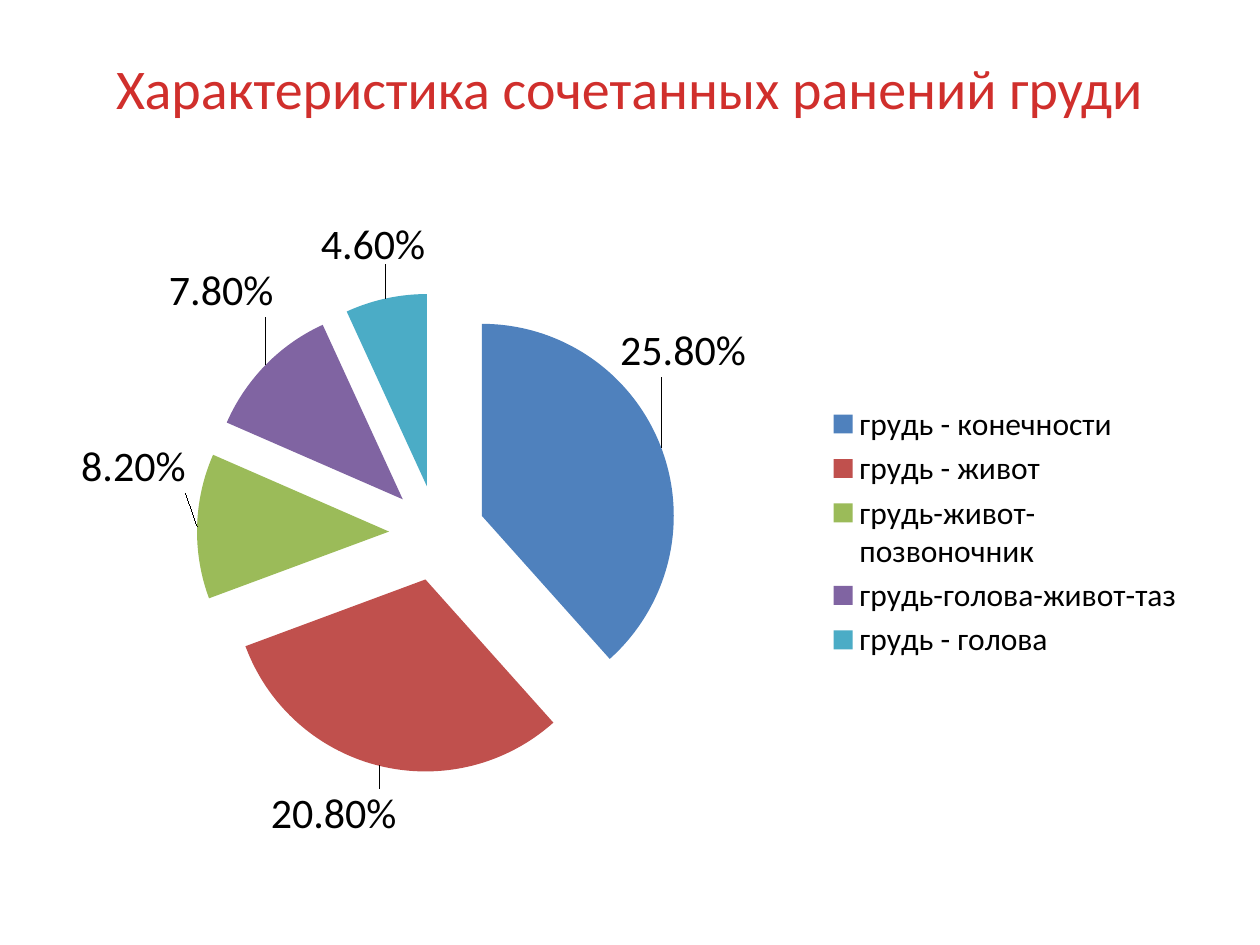
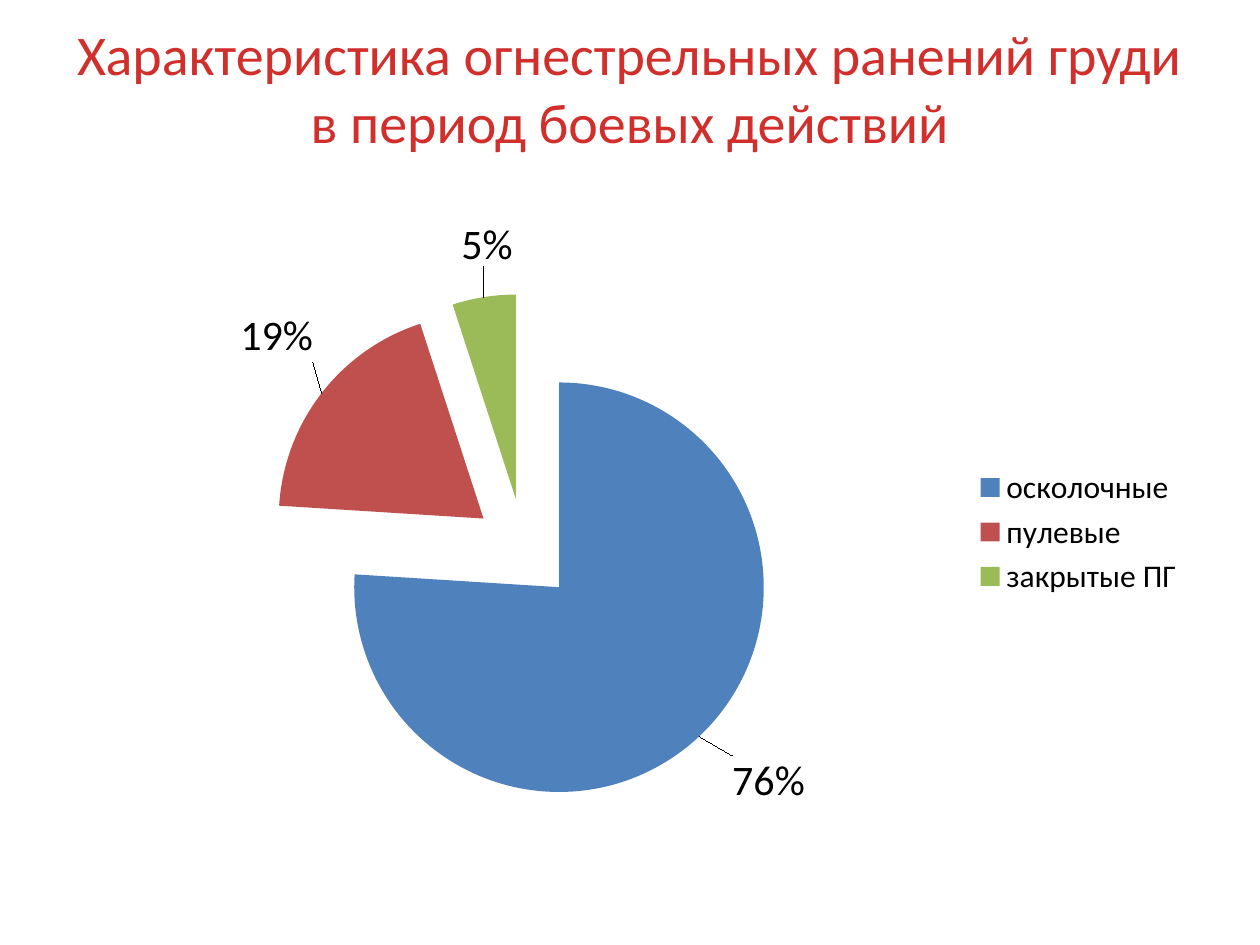
from collections import namedtuple
from dataclasses import dataclass

from lxml.etree import SubElement
from pptx import Presentation
from pptx.chart.data import CategoryChartData
from pptx.dml.color import RGBColor
from pptx.enum.chart import XL_CHART_TYPE, XL_LABEL_POSITION, XL_LEGEND_POSITION
from pptx.enum.text import MSO_ANCHOR, MSO_AUTO_SIZE, PP_ALIGN
from pptx.oxml.ns import qn
from pptx.util import Pt

EMU_PER_PX = 914400 / 126

Box = namedtuple("Box", "left top width height")
# label_shift: px from the label's default place outside the slice
Slice = namedtuple("Slice", "name share label_shift")


@dataclass(frozen=True)
class Theme:
    font: str = "Calibri"
    title_color: str = "D02F2C"
    text_color: str = "000000"
    slice_colors: tuple = ("4F81BD", "C0504D", "9BBB59", "8064A2", "4BACC6")
    title_size: int = 32
    legend_size: int = 18
    label_size: int = 24


THEME = Theme()
PAGE = Box(0, 0, 1260, 945)
TITLE_BOX = Box(63, 38, 1134, 157)
TITLE_BOTTOM_INSET = 65
CHART_BOX = Box(63, 220, 1134, 624)
EXPLOSION_PERCENT = 25

COMBINED_WOUNDS = (
    Slice("грудь - конечности", 0.258, (-48, -67)),
    Slice("грудь - живот", 0.208, (19, 16)),
    Slice("грудь-живот-позвоночник", 0.082, (-4, -58)),
    Slice("грудь-голова-живот-таз", 0.078, (13, -42)),
    Slice("грудь - голова", 0.046, (41, -27)),
)
GUNSHOT_WOUNDS = (
    Slice("осколочные", 0.76, (28, 14)),
    Slice("пулевые", 0.19, (-3, -26)),
    Slice("закрытые ПГ", 0.05, (30, -23)),
)


def px(length):
    return round(length * EMU_PER_PX)


def format_font(font, size, color):
    font.name = THEME.font
    font.size = Pt(size)
    font.color.rgb = RGBColor.from_string(color)


def write_text(frame, text, *, size, color, align=PP_ALIGN.LEFT):
    frame.text = text
    for para in frame.paragraphs:
        para.alignment = align
        for span in para.runs:
            format_font(span.font, size, color)


def add_title(page, text, box):
    title = page.shapes.title
    title.left, title.top, title.width, title.height = map(px, box)
    frame = title.text_frame
    frame.word_wrap = True
    frame.auto_size = MSO_AUTO_SIZE.NONE
    frame.vertical_anchor = MSO_ANCHOR.MIDDLE
    frame.margin_bottom = px(TITLE_BOTTOM_INSET)
    write_text(frame, text, size=THEME.title_size, color=THEME.title_color,
               align=PP_ALIGN.CENTER)


def add_layout(parent, index, **values):
    """Give a chart part a manual layout, in fractions of the chart."""
    for old in parent.findall(qn("c:layout")):
        parent.remove(old)
    layout = SubElement(parent, qn("c:layout"))
    manual = SubElement(layout, qn("c:manualLayout"))
    for name, value in values.items():
        text = value if isinstance(value, str) else f"{value:.4f}"
        SubElement(manual, qn(f"c:{name}")).set("val", text)
    parent.insert(index, layout)


def place_pie(chart, pie_box, box):
    add_layout(chart.plots[0]._element.getparent(), 0, layoutTarget="inner",
               xMode="edge", yMode="edge",
               x=pie_box.left / box.width, y=pie_box.top / box.height,
               w=pie_box.width / box.width, h=pie_box.height / box.height)


def explode(series):
    explosion = SubElement(series._element, qn("c:explosion"))
    explosion.set("val", str(EXPLOSION_PERCENT))
    series._element.find(qn("c:tx")).addnext(explosion)


def label_slices(series, slices, number_format, box):
    labels = series.data_labels
    labels.show_value = True
    labels.number_format = number_format
    labels.number_format_is_linked = False
    labels.position = XL_LABEL_POSITION.OUTSIDE_END
    format_font(labels.font, THEME.label_size, THEME.text_color)
    leader_tag = qn("c:showLeaderLines")
    leader = labels._element.find(leader_tag)
    if leader is None:
        leader = SubElement(labels._element, leader_tag)
    leader.set("val", "1")
    for index, part in enumerate(slices):
        label = series.points[index].data_label
        label.position = XL_LABEL_POSITION.OUTSIDE_END
        format_font(label.font, THEME.label_size, THEME.text_color)
        shift_x, shift_y = part.label_shift
        position = labels._element.findall(qn("c:dLbl"))[index]
        add_layout(position, 1, x=shift_x / box.width, y=shift_y / box.height)


def add_pie(page, slices, number_format, pie_box, box):
    data = CategoryChartData(number_format=number_format)
    data.categories = [part.name for part in slices]
    data.add_series("Series 1", [part.share for part in slices])
    chart = page.shapes.add_chart(XL_CHART_TYPE.PIE, *map(px, box), data).chart
    chart.has_title = False
    format_font(chart.font, THEME.legend_size, THEME.text_color)
    chart.has_legend = True
    chart.legend.position = XL_LEGEND_POSITION.RIGHT
    chart.legend.include_in_layout = False
    chart.plots[0].vary_by_categories = True

    series = chart.plots[0].series[0]
    explode(series)
    for index, color in enumerate(THEME.slice_colors[:len(slices)]):
        fill = series.points[index].format.fill
        fill.solid()
        fill.fore_color.rgb = RGBColor.from_string(color)
    label_slices(series, slices, number_format, box)
    place_pie(chart, pie_box, box)


def add_chart_page(deck, title, slices, number_format, pie_box):
    page = deck.slides.add_slide(deck.slide_layouts[5])
    add_title(page, title, TITLE_BOX)
    add_pie(page, slices, number_format, pie_box, CHART_BOX)


def main():
    deck = Presentation()
    deck.slide_width, deck.slide_height = px(PAGE.width), px(PAGE.height)
    add_chart_page(deck, "Характеристика сочетанных ранений груди",
                   COMBINED_WOUNDS, "0.00%", Box(134, 73, 480, 480))
    add_chart_page(deck, "Характеристика огнестрельных ранений груди\vв период боевых действий",
                   GUNSHOT_WOUNDS, "0%", Box(205, 74, 512, 512))
    deck.save("out.pptx")


if __name__ == "__main__":
    main()
